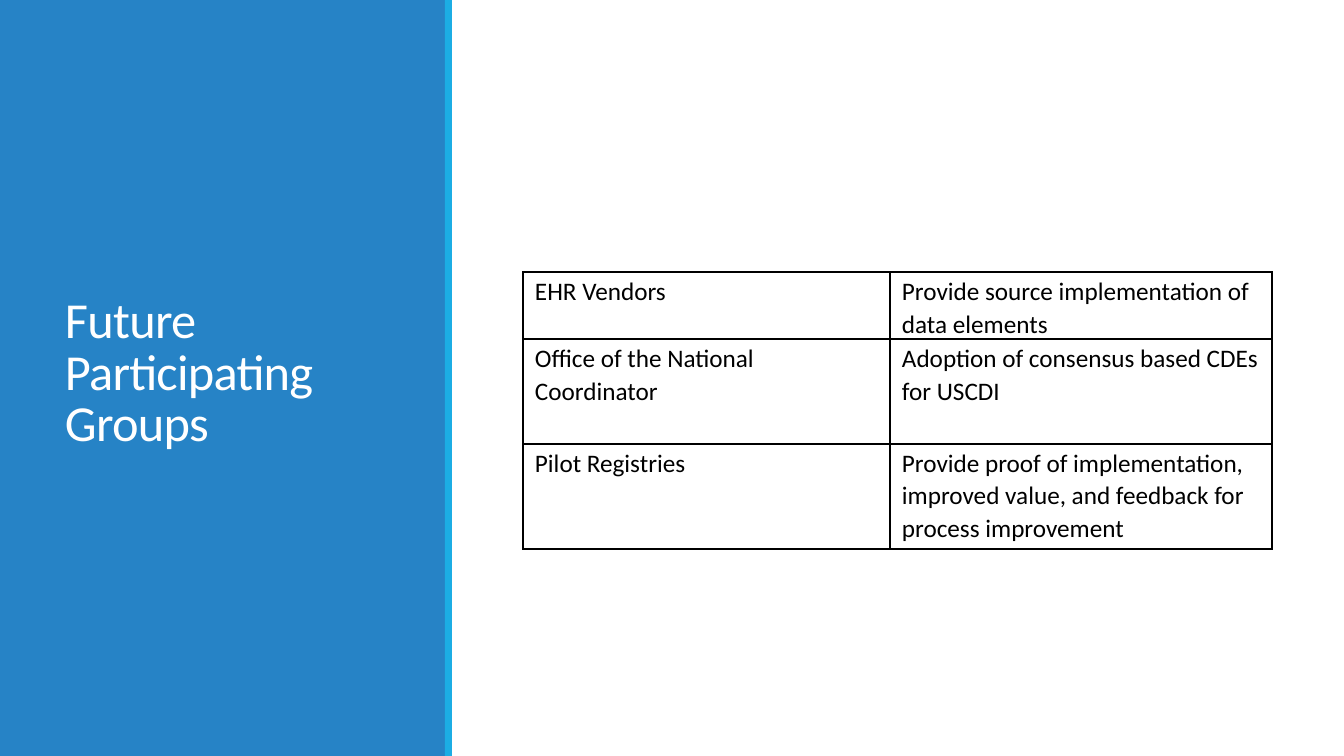
from lxml import etree
from pptx import Presentation
from pptx.dml.color import RGBColor
from pptx.enum.shapes import MSO_SHAPE
from pptx.enum.text import MSO_ANCHOR
from pptx.oxml import parse_xml
from pptx.util import Pt

PX = 914400 / 100.8
RECTANGLE = MSO_SHAPE.RECTANGLE
MIDDLE = MSO_ANCHOR.MIDDLE
DRAWING_NS = "http://schemas.openxmlformats.org/drawingml/2006/main"
COLORS = {"panel": "2683C6", "accent": "1CADE4", "white": "FFFFFF", "black": "000000"}


def px(length):
    return round(length * PX)


def style_text(paragraph, size, color, line_spacing):
    paragraph.line_spacing = line_spacing
    font_format = {"name": "Calibri", "size": Pt(size), "bold": False}
    for attribute, value in font_format.items():
        setattr(paragraph.font, attribute, value)
    paragraph.font.color.rgb = RGBColor.from_string(COLORS[color])
    for run in paragraph.runs:
        for attribute, value in font_format.items():
            setattr(run.font, attribute, value)
        run.font.color.rgb = RGBColor.from_string(COLORS[color])


presentation = Presentation()
presentation.slide_width = px(1344)
presentation.slide_height = px(756)
slide = presentation.slides.add_slide(presentation.slide_layouts[6])

for left, width, color in [(0, 446, "panel"), (445, 7, "accent")]:
    band = slide.shapes.add_shape(RECTANGLE, px(left), 0, px(width), px(756))
    band.shadow.inherit = False
    band.fill.solid()
    band.fill.fore_color.rgb = RGBColor.from_string(COLORS[color])
    band.line.fill.background()

title = slide.shapes.add_textbox(px(55), px(57), px(340), px(636))
title.text_frame.word_wrap = True
title.text_frame.vertical_anchor = MIDDLE
heading = title.text_frame.paragraphs[0]
heading.text = "Future\vParticipating Groups"
style_text(heading, 36, "white", 0.85)
for run in heading.runs:
    run.font._element.set("spc", "-50")

groups = [
    ("EHR Vendors", "Provide source implementation of data elements"),
    ("Office of the National Coordinator", "Adoption of consensus based CDEs for USCDI"),
    ("Pilot Registries",
     "Provide proof of implementation, improved value, and feedback for process improvement"),
]
column_widths = [367, 382]
row_heights = [67, 105, 105]
cell_format = {
    "margin_left": px(12),
    "margin_right": px(12),
    "margin_top": px(2),
    "margin_bottom": 0,
}
groups_table = slide.shapes.add_table(
    len(groups), len(column_widths), px(523), px(272),
    px(sum(column_widths)), px(sum(row_heights)),
).table
groups_table.first_row = False
groups_table.horz_banding = False

for column, width in zip(groups_table.columns, column_widths):
    column.width = px(width)
for row, height, texts in zip(groups_table.rows, row_heights, groups):
    row.height = px(height)
    for cell, text in zip(row.cells, texts):
        cell.text = text
        style_text(cell.text_frame.paragraphs[0], 18, "black", 1.07)
        for attribute, value in cell_format.items():
            setattr(cell, attribute, value)
        cell.fill.background()
        properties = cell._tc.get_or_add_tcPr()
        for position, side in enumerate(["lnL", "lnR", "lnT", "lnB"]):
            border = parse_xml(f'<a:{side} xmlns:a="{DRAWING_NS}" w="{Pt(1)}"/>')
            fill = etree.SubElement(border, f"{{{DRAWING_NS}}}solidFill")
            etree.SubElement(fill, f"{{{DRAWING_NS}}}srgbClr", val=COLORS["black"])
            properties.insert(position, border)

presentation.save("out.pptx")
